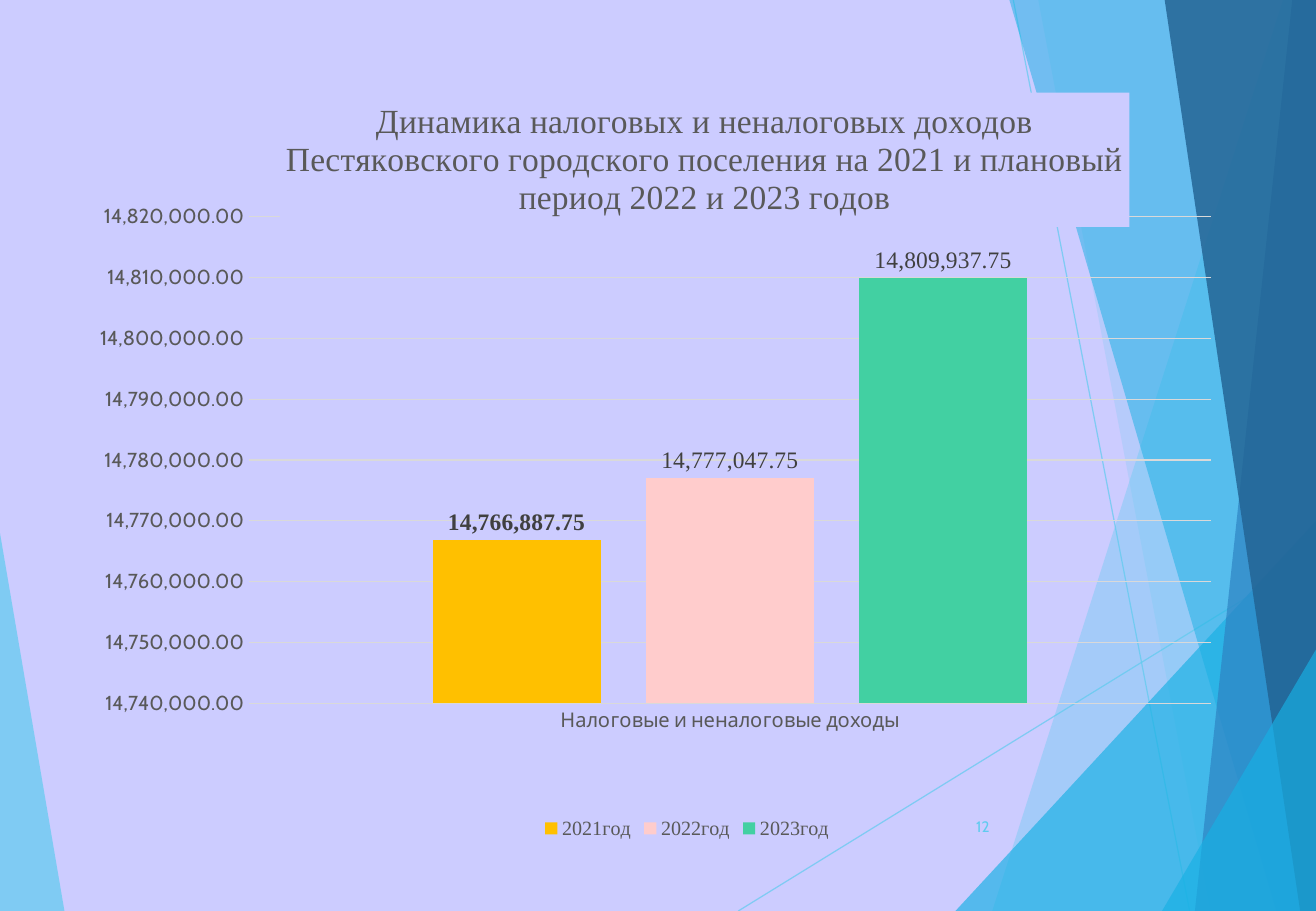
"""Build a slide with a column chart of budget revenues over a faceted background."""
import pptx
import pptx.util
import pptx.chart.data
import pptx.dml.color
import pptx.enum.chart
import pptx.enum.shapes
import pptx.enum.text
import pptx.oxml
import pptx.oxml.ns

WIDTH, HEIGHT = 10.83, 7.5
SERIF, SANS = "Times New Roman", "Cabin"
BACKGROUND, GREY, GRID = "CCCCFF", "595959", "D9D9D9"
NUMBER_FORMAT = "#,##0.00"
TITLE = ("Динамика налоговых и неналоговых доходов Пестяковского городского "
         "поселения на 2021 и плановый период 2022 и 2023 годов")
CATEGORY = "Налоговые и неналоговые доходы"
SERIES = [
    ("2021год", 14766887.75, "FFC000", True),
    ("2022год", 14777047.75, "FFCCCC", False),
    ("2023год", 14809937.75, "42D0A2", False),
]
LEFT_FACET = ([(0, 58.5), (4.9, 100), (0, 100)], "5FCBEF", 70)
RAYS = [((56.1, 100), (100, 60.9)), ((77, 0), (90.4, 100))]
RIGHT_FACETS = [
    ([(100, 0), (97.5, 0), (75.4, 100), (100, 100)], "5FCBEF", 36),
    ([(100, 0), (78.9, 0), (92, 100), (100, 100)], "5FCBEF", 20),
    ([(100, 57.2), (72.6, 100), (100, 100)], "17B0E4", 66),
    ([(100, 0), (76.7, 0), (97, 100), (100, 100)], "17B0E4", 50),
    ([(100, 0), (98.2, 0), (90.8, 100), (100, 100)], "2E83C3", 70),
    ([(100, 0), (88.5, 0), (98.8, 100), (100, 100)], "226292", 82),
    ([(100, 71.3), (88.3, 100), (100, 100)], "17B0E4", 66),
]


def rgb(value):
    """Turn a hex string into a colour."""
    return pptx.dml.color.RGBColor.from_string(value)


def at(x, y):
    """Turn percentages of the slide into a pair of lengths."""
    return pptx.util.Inches(WIDTH * x / 100), pptx.util.Inches(HEIGHT * y / 100)


def set_fill(fill, color):
    """Apply a solid fill."""
    fill.solid()
    fill.fore_color.rgb = rgb(color)


def set_alpha(shape, percent):
    """Set the opacity of the first colour in a shape."""
    color = shape._element.spPr.find(".//" + pptx.oxml.ns.qn("a:srgbClr"))
    alpha = color.makeelement(pptx.oxml.ns.qn("a:alpha"), {"val": str(percent * 1000)})
    color.append(alpha)


def set_font(font, name, size, color, bold=False):
    """Format a font."""
    font.name, font.size, font.bold = name, pptx.util.Pt(size), bold
    font.color.rgb = rgb(color)


def add_facet(s, points, color, opacity):
    """Draw one translucent polygon."""
    corners = [at(*point) for point in points]
    builder = s.shapes.build_freeform(*corners[0], scale=1.0)
    builder.add_line_segments(corners[1:], close=True)
    sp = builder.convert_to_shape()
    sp.shadow.inherit = False
    set_fill(sp.fill, color)
    sp.line.fill.background()
    set_alpha(sp, opacity)


def add_ray(s, start, end):
    """Draw one thin translucent line."""
    kind = pptx.enum.shapes.MSO_CONNECTOR.STRAIGHT
    ray = s.shapes.add_connector(kind, *at(*start), *at(*end))
    ray.line.color.rgb = rgb("5FCBEF")
    ray.line.width = pptx.util.Pt(0.75)
    set_alpha(ray, 70)
    pr = ray._element.spPr
    pr.append(pr.makeelement(pptx.oxml.ns.qn("a:effectLst"), {}))


def set_layout(element, index, target="", **shares):
    """Place a chart part by shares of the chart's size."""
    for old in element.findall(pptx.oxml.ns.qn("c:layout")):
        element.remove(old)
    inner = '<c:layoutTarget val="inner"/>' if target else ""
    modes = "".join(f'<c:{key}Mode val="edge"/>' for key in "xy")
    values = "".join(f'<c:{key} val="{val}"/>' for key, val in shares.items())
    element.insert(index, pptx.oxml.parse_xml(
        f'<c:layout {pptx.oxml.ns.nsdecls("c")}><c:manualLayout>'
        f"{inner}{modes}{values}</c:manualLayout></c:layout>"))


def format_title(chart):
    """Write the chart title on a plate of the background colour."""
    title = chart.chart_title
    title.text_frame.text = TITLE
    set_font(title.text_frame.paragraphs[0].runs[0].font, SERIF, 20, GREY)
    set_fill(title.format.fill, BACKGROUND)
    title.include_in_layout = False
    set_layout(title._element, 1, x=0.156, y=0.029)


def format_axes(chart):
    """Format both axes and the grid."""
    for axis in (chart.category_axis, chart.value_axis):
        axis.major_tick_mark = pptx.enum.chart.XL_TICK_MARK.NONE
        axis.minor_tick_mark = pptx.enum.chart.XL_TICK_MARK.NONE
        set_font(axis.tick_labels.font, SANS, 12, GREY)
    values = chart.value_axis
    values.minimum_scale, values.maximum_scale = 14740000, 14820000
    values.major_unit = 10000
    values.tick_labels.number_format = NUMBER_FORMAT
    values.tick_labels.number_format_is_linked = False
    values.format.line.fill.background()
    for line in (chart.category_axis.format.line, values.major_gridlines.format.line):
        line.color.rgb = rgb(GRID)
        line.width = pptx.util.Pt(0.75)


def format_series(plot):
    """Colour the columns and label them with their values."""
    plot.gap_width, plot.overlap, plot.vary_by_categories = 219, -27, False
    for series, (_, _, color, bold) in zip(plot.series, SERIES):
        set_fill(series.format.fill, color)
        labels = series.data_labels
        labels.show_value = True
        labels.position = pptx.enum.chart.XL_LABEL_POSITION.OUTSIDE_END
        labels.number_format = NUMBER_FORMAT
        labels.number_format_is_linked = False
        set_font(labels.font, SERIF, 14, "404040", bold)


def format_legend(chart):
    """Put the legend under the columns."""
    chart.has_legend = True
    legend = chart.legend
    legend.position = pptx.enum.chart.XL_LEGEND_POSITION.BOTTOM
    legend.include_in_layout = False
    set_font(legend.font, SERIF, 12, GREY)
    set_layout(legend._element, 1, x=0.39, y=0.96)


def add_revenue_chart(s):
    """Add the column chart of revenues."""
    data = pptx.chart.data.CategoryChartData(number_format=NUMBER_FORMAT)
    data.categories = [CATEGORY]
    for name, value, _, _ in SERIES:
        data.add_series(name, [value])
    kind = pptx.enum.chart.XL_CHART_TYPE.COLUMN_CLUSTERED
    chart = s.shapes.add_chart(kind, *at(7.6, 7.7), *at(84.6, 85.1), data).chart
    set_font(chart.font, SANS, 10, "000000")
    format_title(chart)
    format_axes(chart)
    format_series(chart.plots[0])
    format_legend(chart)
    plot_area = chart._chartSpace.chart.plotArea
    set_layout(plot_area, 0, "inner", x=0.128, y=0.189, w=0.87, h=0.628)


def add_page_number(s):
    """Add the page number."""
    tf = s.shapes.add_textbox(*at(70.5, 88.1), *at(5.6, 5.3)).text_frame
    tf.word_wrap = True
    tf.vertical_anchor = pptx.enum.text.MSO_ANCHOR.MIDDLE
    p = tf.paragraphs[0]
    p.text = "12"
    p.alignment = pptx.enum.text.PP_ALIGN.RIGHT
    set_font(p.runs[0].font, SANS, 9, "5FCBEF")


def main():
    """Build and save the slide."""
    prs = pptx.Presentation()
    prs.slide_width, prs.slide_height = at(100, 100)
    s = prs.slides.add_slide(prs.slide_layouts[6])
    set_fill(s.background.fill, BACKGROUND)
    add_facet(s, *LEFT_FACET)
    for ray in RAYS:
        add_ray(s, *ray)
    for facet in RIGHT_FACETS:
        add_facet(s, *facet)
    add_revenue_chart(s)
    add_page_number(s)
    prs.save("out.pptx")


if __name__ == "__main__":
    main()
